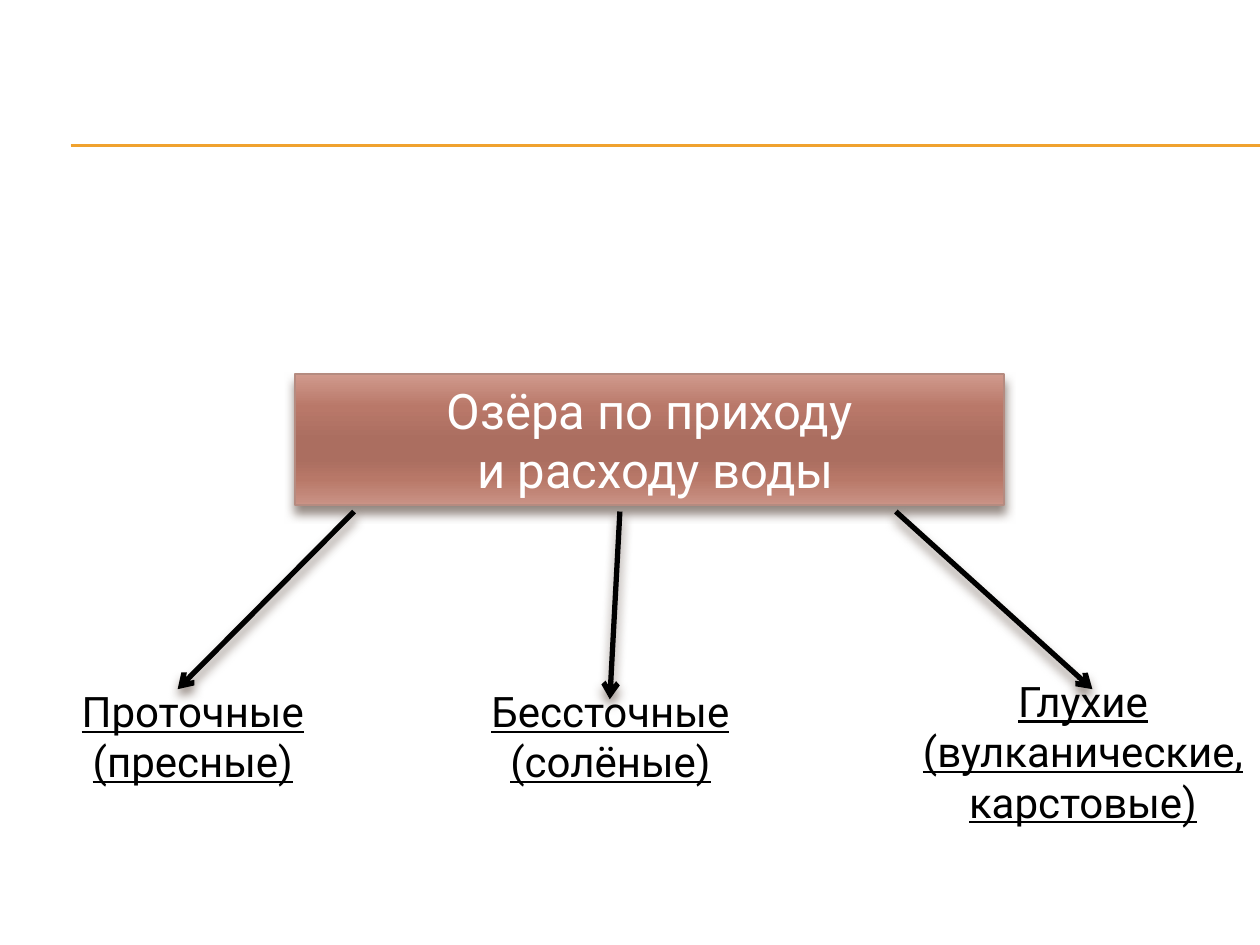
"""Build a slide that sorts lakes by inflow and outflow of water."""
from lxml import etree
from pptx import Presentation
from pptx.dml.color import RGBColor
from pptx.enum.shapes import MSO_CONNECTOR, MSO_SHAPE
from pptx.enum.text import MSO_ANCHOR, PP_ALIGN
from pptx.oxml import parse_xml
from pptx.util import Inches, Pt

LINE = MSO_CONNECTOR.STRAIGHT
RECT = MSO_SHAPE.RECTANGLE
TOP, MIDDLE = MSO_ANCHOR.TOP, MSO_ANCHOR.MIDDLE
CENTER = PP_ALIGN.CENTER
BLACK = RGBColor(0x00, 0x00, 0x00)
WHITE = RGBColor(0xFF, 0xFF, 0xFF)
GOLD = RGBColor(0xF0, 0xA2, 0x2E)
EDGE = RGBColor(0xB5, 0x8B, 0x80)
SHADE = RGBColor(0x4E, 0x3B, 0x30)
FONT = "Roboto"
NS = "http://schemas.openxmlformats.org/drawingml/2006/main"

HEAD = ["Озёра по приходу", " и расходу воды"]
HEAD_BOX = (2.34, 2.97, 5.63, 1.04)
STOPS = [
    (0, RGBColor(0xD0, 0x9A, 0x8D)),
    (25, RGBColor(0xB9, 0x78, 0x69)),
    (50, RGBColor(0xAB, 0x6E, 0x60)),
    (65, RGBColor(0xAB, 0x6E, 0x60)),
    (80, RGBColor(0xB8, 0x78, 0x68)),
    (100, RGBColor(0xCA, 0x93, 0x86)),
]
KINDS = [
    (["Проточные", "(пресные)"], (-0.23, 5.39, 3.52, 0.91)),
    (["Бессточные", "(солёные)"], (2.89, 5.39, 3.91, 0.91)),
    (["Глухие", "(вулканические, карстовые)"], (7.19, 5.31, 2.81, 1.31)),
]
ARROWS = [
    (2.81, 4.06, 1.41, 5.47),
    (7.11, 4.06, 8.67, 5.47),
    (4.92, 4.06, 4.84, 5.55),
]
RULES = [(0.56, y, 10, y) for y in (1.15, 1.16)]


def cast(shape, soft=True):
    xml = f'<a:effectLst xmlns:a="{NS}"/>'
    if soft:
        xml = (f'<a:effectLst xmlns:a="{NS}"><a:outerShdw blurRad="{Pt(6)}" '
               f'dist="{Pt(4)}" dir="5400000" rotWithShape="0">'
               f'<a:srgbClr val="{SHADE}"><a:alpha val="60000"/></a:srgbClr>'
               '</a:outerShdw></a:effectLst>')
    shape._element.spPr.append(parse_xml(xml))


def blend(shape):
    shape.fill.gradient()
    shape.fill.gradient_angle = 270
    stops = shape._element.spPr.find(f".//{{{NS}}}gsLst")
    for old in list(stops):
        stops.remove(old)
    for pos, color in STOPS:
        stop = etree.SubElement(stops, f"{{{NS}}}gs", pos=str(pos * 1000))
        etree.SubElement(stop, f"{{{NS}}}srgbClr", val=str(color))


def write(shape, lines, size=24, color=BLACK, under=None, anchor=TOP):
    frame = shape.text_frame
    frame.word_wrap = True
    frame.vertical_anchor = anchor
    for i, line in enumerate(lines):
        para = frame.add_paragraph() if i else frame.paragraphs[0]
        para.alignment = CENTER
        run = para.add_run()
        run.text = line
        font = run.font
        font.name, font.size, font.underline = FONT, Pt(size), under
        font.color.rgb = color


def draw(shapes, ends, color, width, arrow=False):
    line = shapes.add_connector(LINE, *map(Inches, ends))
    line.line.color.rgb = color
    line.line.width = Pt(width)
    if arrow:
        ln = line._element.spPr.find(f"{{{NS}}}ln")
        etree.SubElement(ln, f"{{{NS}}}tailEnd", type="arrow")
    cast(line, arrow)


def main():
    deck = Presentation()
    deck.slide_width, deck.slide_height = Inches(10), Inches(7.5)
    shapes = deck.slides.add_slide(deck.slide_layouts[6]).shapes
    for ends in RULES:
        draw(shapes, ends, GOLD, 0.75)
    head = shapes.add_shape(RECT, *map(Inches, HEAD_BOX))
    blend(head)
    head.line.color.rgb = EDGE
    head.line.width = Pt(0.79)
    cast(head)
    write(head, HEAD, size=28, color=WHITE, anchor=MIDDLE)
    for ends in ARROWS:
        draw(shapes, ends, BLACK, 3, arrow=True)
    for lines, box in KINDS:
        write(shapes.add_textbox(*map(Inches, box)), lines, under=True)
    deck.save("out.pptx")


if __name__ == "__main__":
    main()
